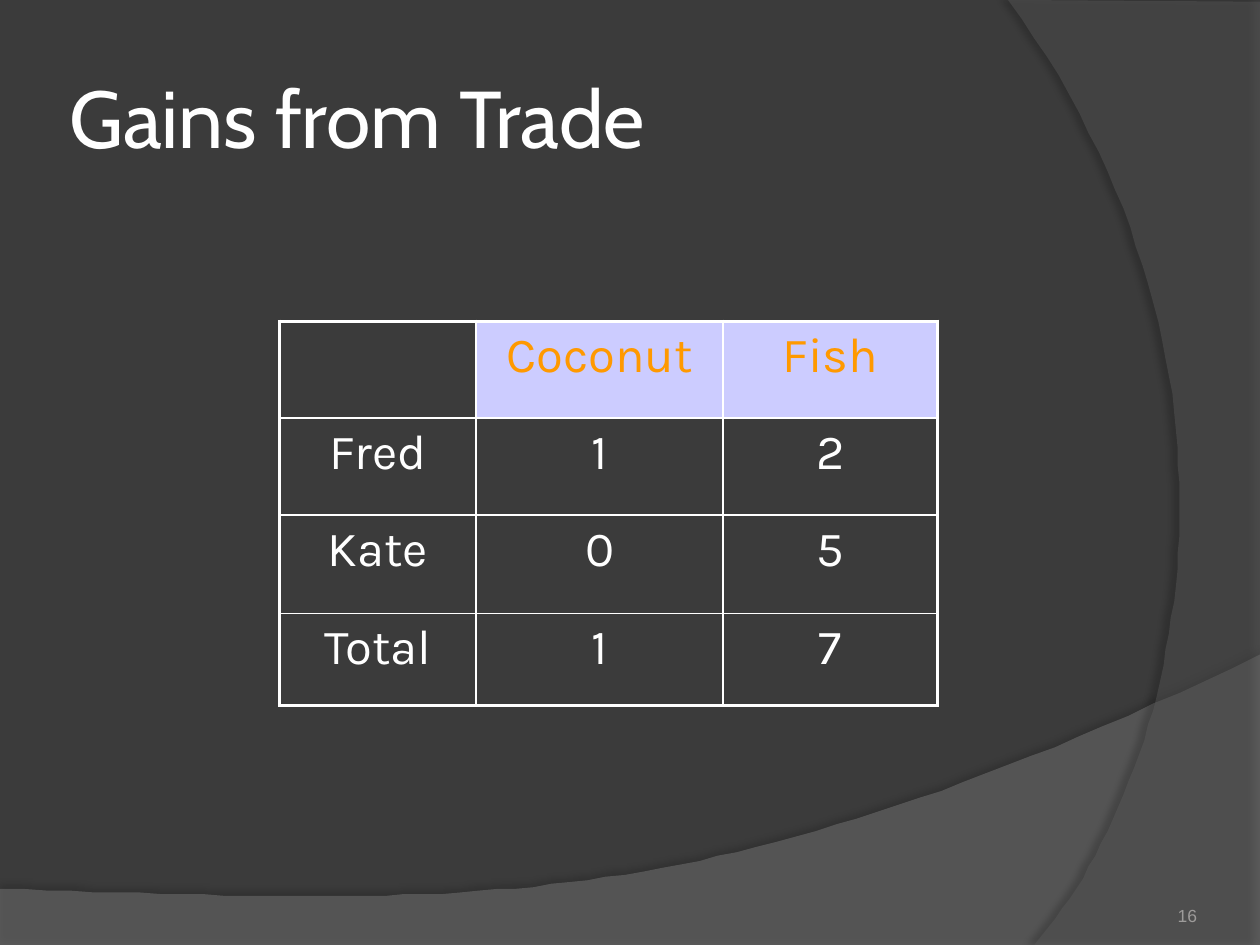
from lxml.etree import SubElement
from pptx import Presentation
from pptx.dml.color import RGBColor
from pptx.enum.text import MSO_ANCHOR as Anchor, PP_ALIGN as Align
from pptx.oxml.ns import qn
from pptx.util import Pt

TITLE = "Gains from Trade"
PAGE_NUMBER = "16"
TRADES = [
    ("", "Coconut", "Fish"),
    ("Fred", "1", "2"),
    ("Kate", "0", "5"),
    ("Total", "1", "7"),
]
THEME = {
    "background": "3B3B3B",
    "header_fill": "CCCCFF",
    "border": "FFFFFF",
    "shadow": "000000",
    "title": {"name": "Cabin", "size": 46, "color": "FFFFFF"},
    "header": {"name": "Karla", "size": 28, "color": "FF9900"},
    "body": {"name": "Karla", "size": 28, "color": "FFFFFF"},
    "number": {"name": "Arial", "size": 10, "color": "9D9B9A"},
}
WIDTH, HEIGHT = 720, 540
TABLE_LEFT, TABLE_TOP = 159.84, 183.6
COLUMN_WIDTHS = [112.3, 141.1, 122.4]
ROW_HEIGHTS = [55.4, 55.4, 56.2, 52.6]
OUTER_LINE, INNER_LINE = 2.25, 1
CURVE_STEPS = 60

# Each wave: points before the curve, then the Bezier control points.
WAVES = [
    {
        "corners": [(0, 540.7), (720, 540.7)],
        "curve": [(720, 374.4), (402.5, 524.9), (281.5, 517.7), (0, 507.6)],
        "fill": "7F7F7F", "opacity": 45,
        "shadow": {"opacity": 35, "blur": 4, "distance": 3.5, "angle": 270},
    },
    {
        "corners": [(720, 1.4), (720, 540)],
        "curve": [(591.1, 540), (673.2, 445.7), (733, 216), (576, 0)],
        "fill": "5E5E5E", "opacity": 40,
        "shadow": {"opacity": 45, "blur": 4, "distance": 4, "angle": 180},
    },
]


def bezier_points(controls):
    """Sample a cubic Bezier curve as a list of points."""
    points = []
    for step in range(CURVE_STEPS + 1):
        t = step / CURVE_STEPS
        weights = ((1 - t) ** 3, 3 * t * (1 - t) ** 2, 3 * t**2 * (1 - t), t**3)
        points.append(tuple(sum(w * point[axis] for w, point in zip(weights, controls))
                            for axis in (0, 1)))
    return points


def add_color(parent, color, opacity=100):
    element = SubElement(parent, qn("a:srgbClr"), val=color)
    if opacity < 100:
        SubElement(element, qn("a:alpha"), val=str(opacity * 1000))


def add_wave(slide, wave):
    start, *rest = wave["corners"] + bezier_points(wave["curve"])
    builder = slide.shapes.build_freeform(*start, scale=Pt(1))
    builder.add_line_segments(rest, close=True)
    shape = builder.convert_to_shape()
    shape.line.fill.background()
    shape.fill.solid()
    shape.fill.fore_color.rgb = RGBColor.from_string(wave["fill"])
    properties = shape.fill._xPr
    color = properties.find(qn("a:solidFill")).find(qn("a:srgbClr"))
    SubElement(color, qn("a:alpha"), val=str(wave["opacity"] * 1000))
    shadow = wave["shadow"]
    effects = SubElement(properties, qn("a:effectLst"))
    outer = SubElement(effects, qn("a:outerShdw"), blurRad=str(Pt(shadow["blur"])),
                       dist=str(Pt(shadow["distance"])), dir=str(shadow["angle"] * 60000),
                       algn="ctr", rotWithShape="0")
    add_color(outer, THEME["shadow"], shadow["opacity"])


def write(frame, text, style, alignment, space_before=0):
    paragraph = frame.paragraphs[0]
    paragraph.alignment = alignment
    paragraph.space_before = Pt(space_before)
    run = paragraph.add_run()
    run.text = text
    font = run.font
    for name, value in {"name": style["name"], "size": Pt(style["size"])}.items():
        setattr(font, name, value)
    font.color.rgb = RGBColor.from_string(style["color"])


def add_text(slide, box, text, style, alignment, anchor, margin):
    frame = slide.shapes.add_textbox(*map(Pt, box)).text_frame
    settings = {"word_wrap": True, "vertical_anchor": anchor}
    settings |= {f"margin_{side}": Pt(margin) for side in ("left", "top", "right", "bottom")}
    for name, value in settings.items():
        setattr(frame, name, value)
    write(frame, text, style, alignment)


def add_borders(cell, outer_edges):
    properties = cell._tc.get_or_add_tcPr()
    for edge, is_outer in outer_edges.items():
        width = OUTER_LINE if is_outer else INNER_LINE
        line = SubElement(properties, qn(f"a:ln{edge}"), w=str(Pt(width)))
        add_color(SubElement(line, qn("a:solidFill")), THEME["border"])


def add_trade_table(slide):
    last_row, last_column = len(TRADES) - 1, len(COLUMN_WIDTHS) - 1
    box = (TABLE_LEFT, TABLE_TOP, sum(COLUMN_WIDTHS), sum(ROW_HEIGHTS))
    table = slide.shapes.add_table(len(TRADES), len(COLUMN_WIDTHS), *map(Pt, box)).table
    table.first_row = table.horz_banding = False
    for column, width in zip(table.columns, COLUMN_WIDTHS):
        column.width = Pt(width)
    for row, height in zip(table.rows, ROW_HEIGHTS):
        row.height = Pt(height)
    for i, values in enumerate(TRADES):
        style = THEME["body" if i else "header"]
        for j, text in enumerate(values):
            cell = table.cell(i, j)
            add_borders(cell, {"L": j == 0, "R": j == last_column,
                               "T": i == 0, "B": i == last_row})
            if i == 0 and text:
                cell.fill.solid()
                cell.fill.fore_color.rgb = RGBColor.from_string(THEME["header_fill"])
            else:
                cell.fill.background()
            if text:
                write(cell.text_frame, text, style, Align.CENTER, 0.2 * style["size"])


def main():
    presentation = Presentation()
    presentation.slide_width, presentation.slide_height = Pt(WIDTH), Pt(HEIGHT)
    slide = presentation.slides.add_slide(presentation.slide_layouts[6])
    slide.background.fill.solid()
    slide.background.fill.fore_color.rgb = RGBColor.from_string(THEME["background"])
    for wave in WAVES:
        add_wave(slide, wave)
    add_text(slide, (36, 21.6, 648, 90), TITLE, THEME["title"], Align.LEFT, Anchor.MIDDLE, 3.6)
    add_trade_table(slide)
    add_text(slide, (516.2, 491.8, 167.8, 37.4), PAGE_NUMBER, THEME["number"],
             Align.RIGHT, Anchor.BOTTOM, 0)
    presentation.save("out.pptx")


if __name__ == "__main__":
    main()
